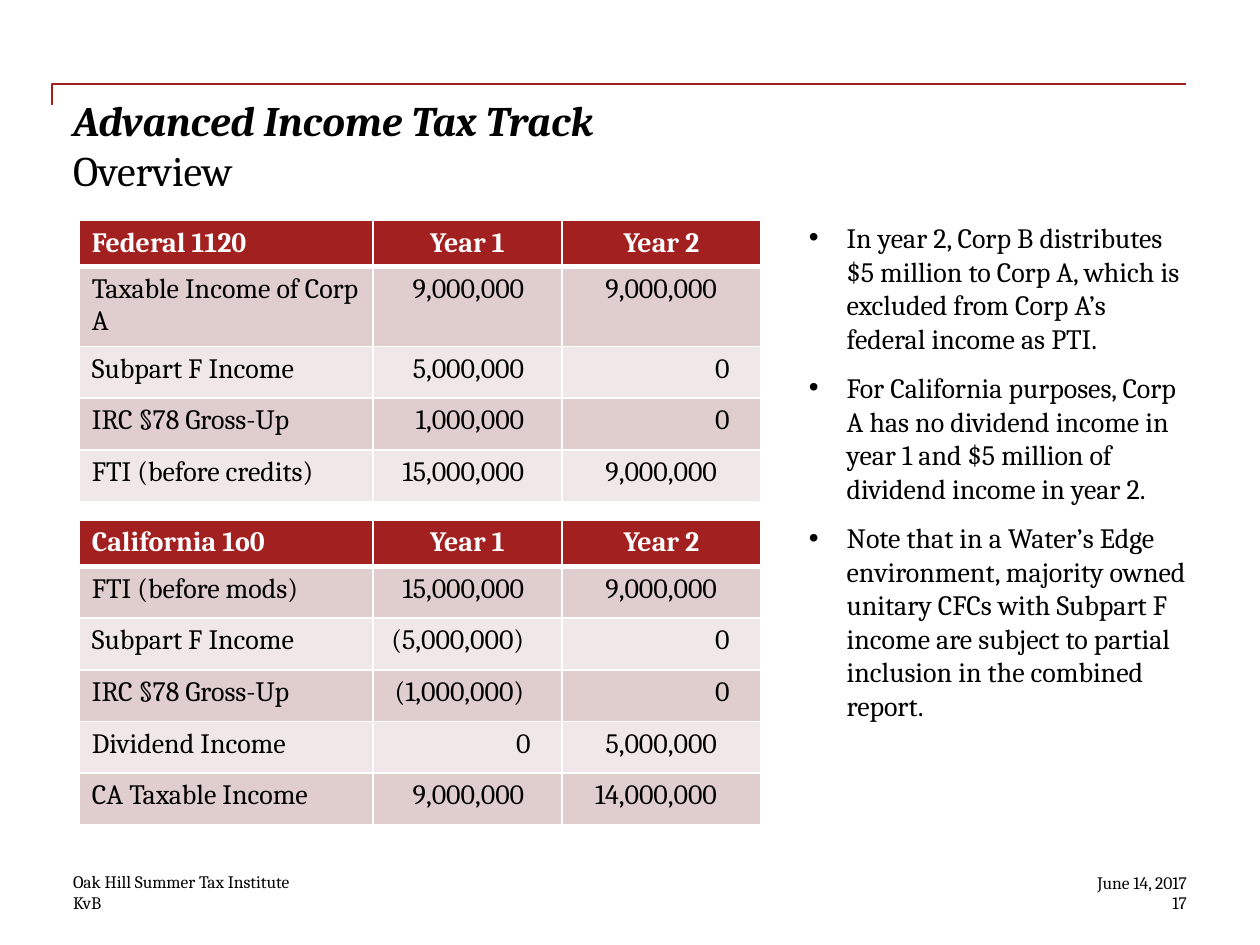
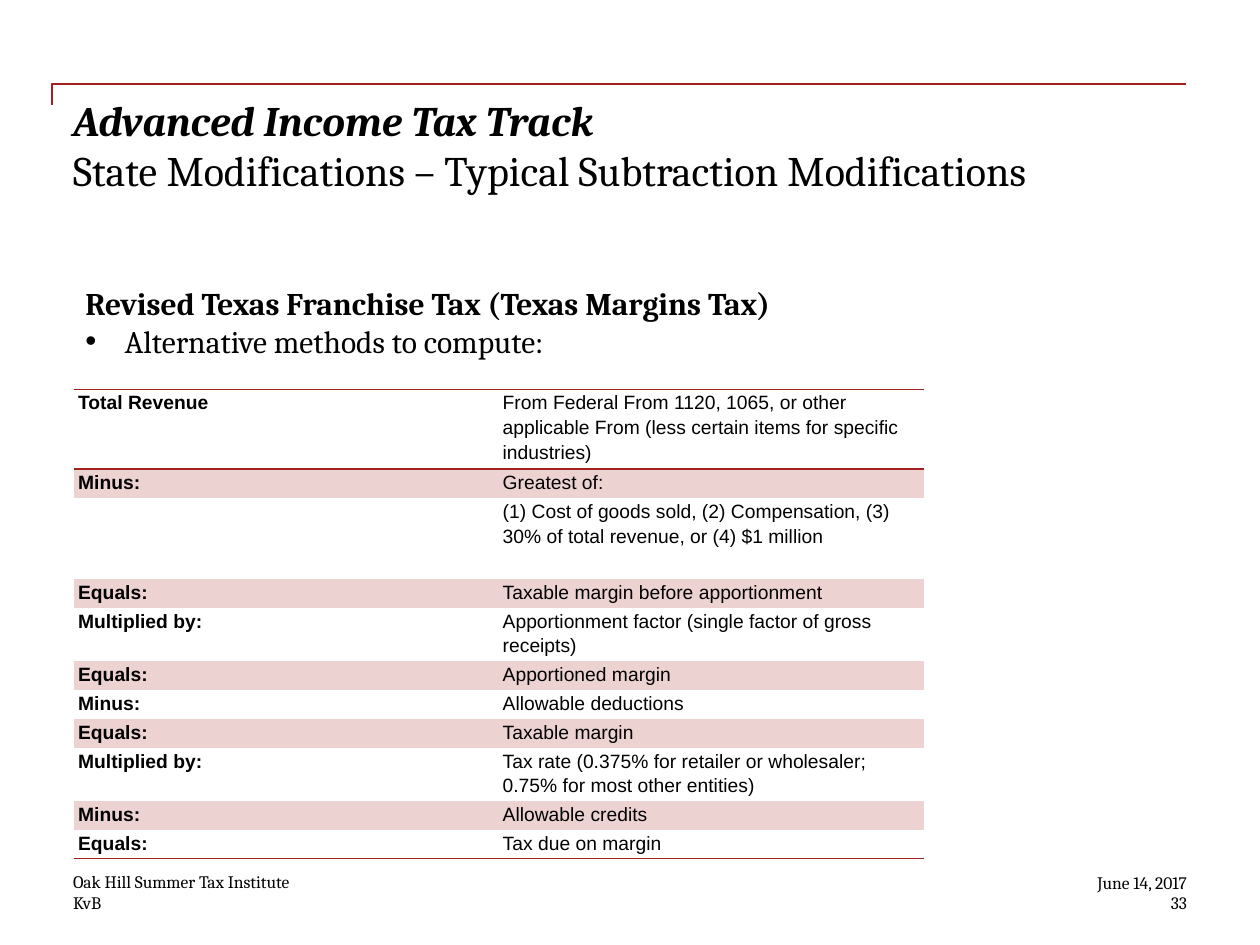
from lxml import etree
from pptx import Presentation
from pptx.dml.color import RGBColor
from pptx.enum.shapes import MSO_CONNECTOR
from pptx.enum.text import MSO_ANCHOR, PP_ALIGN
from pptx.oxml.ns import qn
from pptx.util import Inches, Pt

LEFT, CENTER, RIGHT = PP_ALIGN.LEFT, PP_ALIGN.CENTER, PP_ALIGN.RIGHT
TOP, MIDDLE, BOTTOM = MSO_ANCHOR.TOP, MSO_ANCHOR.MIDDLE, MSO_ANCHOR.BOTTOM
ELBOW = MSO_CONNECTOR.ELBOW
RED, WHITE, BLACK = "A32020", "FFFFFF", "000000"
BAND_DARK, BAND_LIGHT, BAND_PINK = "E0CDCD", "F0E8E8", "EDD2D2"


def write(tf, text, size=16, font="Cambria", color=BLACK, bold=False, italic=False,
          align=LEFT, after=0, spacing=None, indent=None):
    p = tf.paragraphs[0]
    if p.runs:
        p = tf.add_paragraph()
    p.alignment = align
    p.space_after = Pt(after)
    if spacing:
        p.line_spacing = spacing
    if indent:
        pPr = p._p.get_or_add_pPr()
        pPr.set("marL", str(Inches(indent)))
        pPr.set("indent", str(-Inches(indent)))
        etree.SubElement(pPr, qn("a:buFont")).set("typeface", "Arial")
        etree.SubElement(pPr, qn("a:buChar")).set("char", "•")
    r = p.add_run()
    r.text = text
    r.font.size = Pt(size)
    r.font.name = font
    r.font.bold = bold
    r.font.italic = italic
    r.font.color.rgb = RGBColor.from_string(color)


def style_cell(cell, fill, borders):
    if fill:
        cell.fill.solid()
        cell.fill.fore_color.rgb = RGBColor.from_string(fill)
    else:
        cell.fill.background()
    tcPr = cell._tc.get_or_add_tcPr()
    for i, side in enumerate("LRTB"):
        ln = etree.Element(qn("a:ln" + side))
        if side in borders:
            color, width = borders[side]
            ln.set("w", str(Pt(width)))
            line_fill = etree.SubElement(ln, qn("a:solidFill"))
            etree.SubElement(line_fill, qn("a:srgbClr")).set("val", color)
        else:
            etree.SubElement(ln, qn("a:noFill"))
        tcPr.insert(i, ln)


prs = Presentation()
prs.slide_width, prs.slide_height = Inches(10), Inches(7.5)

pages = [
    ("Overview", "17"),
    ("State Modifications – Typical Subtraction Modifications", "33"),
]
for subtitle, number in pages:
    s = prs.slides.add_slide(prs.slide_layouts[6])
    cn = s.shapes.add_connector(ELBOW, Inches(5), Inches(5.25), Inches(4.83), Inches(-3.75))
    cn.line.color.rgb = RGBColor.from_string(RED)
    cn.line.width = Pt(1)
    spPr = cn._element.spPr
    spPr.find(qn("a:xfrm")).set("rot", str(90 * 60000))
    spPr.find(qn("a:prstGeom")).set("prst", "bentConnector2")
    etree.SubElement(spPr, qn("a:effectLst"))

    boxes = [
        (0.58, 0.75, 8.83, 1, TOP, [
            ("Advanced Income Tax Track", dict(size=24, bold=True, italic=True)),
            (subtitle, dict(size=24))]),
        (0.58, 6.92, 5.75, 0.16, BOTTOM, [("Oak Hill Summer Tax Institute", dict(size=10))]),
        (0.58, 7.08, 2.83, 0.17, TOP, [("KvB", dict(size=10))]),
        (7.75, 6.92, 1.67, 0.17, TOP, [("June 14, 2017", dict(size=10, align=RIGHT))]),
        (7.75, 7.08, 1.67, 0.17, TOP, [(number, dict(size=10, align=RIGHT))]),
    ]
    for x, y, w, h, anchor, lines in boxes:
        tf = s.shapes.add_textbox(Inches(x), Inches(y), Inches(w), Inches(h)).text_frame
        tf.word_wrap = True
        tf.vertical_anchor = anchor
        tf.margin_left = tf.margin_right = tf.margin_top = tf.margin_bottom = 0
        for text, fmt in lines:
            write(tf, text, **fmt)

overview, texas = prs.slides

tax_tables = [
    (1.75, [
        ("Federal 1120", "Year 1", "Year 2"),
        ("Taxable Income of Corp A", "9,000,000", "9,000,000"),
        ("Subpart F Income", "5,000,000", "0"),
        ("IRC §78 Gross-Up", "1,000,000", "0"),
        ("FTI (before credits)", "15,000,000", "9,000,000"),
    ]),
    (4.13, [
        ("California 1o0", "Year 1", "Year 2"),
        ("FTI (before mods)", "15,000,000", "9,000,000"),
        ("Subpart F Income", "(5,000,000)", "0"),
        ("IRC §78 Gross-Up", "(1,000,000)", "0"),
        ("Dividend Income", "0", "5,000,000"),
        ("CA Taxable Income", "9,000,000", "14,000,000"),
    ]),
]
for top, rows in tax_tables:
    height = 0.32 + 0.41 * (len(rows) - 1)
    table = overview.shapes.add_table(len(rows), 3, Inches(0.63), Inches(top),
                                      Inches(5.42), Inches(height)).table
    for col, width in zip(table.columns, (2.33, 1.5, 1.58)):
        col.width = Inches(width)
    for i, row in enumerate(rows):
        table.rows[i].height = Inches(0.41 if i else 0.32)
        for j, text in enumerate(row):
            cell = table.cell(i, j)
            borders = dict.fromkeys("LRTB", (WHITE, 1))
            if i == 0:
                fill = RED
                borders["B"] = (WHITE, 3)
                write(cell.text_frame, text, color=WHITE, bold=True,
                      align=CENTER if j else LEFT)
            else:
                fill = BAND_DARK if i % 2 else BAND_LIGHT
                if i == 1:
                    borders["T"] = (WHITE, 3)
                if j:
                    cell.margin_right = Inches(0.25 if text == "0" else 0.3 + 0.05 * (j - 1))
                write(cell.text_frame, text, align=RIGHT if j else LEFT)
            style_cell(cell, fill, borders)

notes = [
    "In year 2, Corp B distributes $5 million to Corp A, which is excluded from "
    "Corp A’s federal income as PTI.",
    "For California purposes, Corp A has no dividend income in year 1 and $5 million "
    "of dividend income in year 2.",
    "Note that in a Water’s Edge environment, majority owned unitary CFCs with Subpart F "
    "income are subject to partial inclusion in the combined report.",
]
tf = overview.shapes.add_textbox(Inches(6.42), Inches(1.75), Inches(3), Inches(4.83)).text_frame
tf.word_wrap = True
tf.margin_left = tf.margin_right = tf.margin_top = tf.margin_bottom = 0
for note in notes:
    write(tf, note, after=9, indent=0.3)

margin_steps = [
    ("Total Revenue", "From Federal From 1120, 1065, or other applicable From "
     "(less certain items for specific industries)", 0.59),
    ("Minus:", "Greatest of:", 0.23),
    ("", "(1) Cost of goods sold, (2) Compensation, (3) 30% of total revenue, "
     "or (4) $1 million", 0.64),
    ("Equals:", "Taxable margin before apportionment", 0.23),
    ("Multiplied by:", "Apportionment factor (single factor of gross receipts)", 0.39),
    ("Equals:", "Apportioned margin", 0.23),
    ("Minus:", "Allowable deductions", 0.23),
    ("Equals:", "Taxable margin", 0.23),
    ("Multiplied by:", "Tax rate (0.375% for retailer or wholesaler; "
     "0.75% for most other entities)", 0.39),
    ("Minus:", "Allowable credits", 0.23),
    ("Equals:", "Tax due on margin", 0.23),
]
last = len(margin_steps) - 1
table = texas.shapes.add_table(len(margin_steps), 2, Inches(0.59), Inches(3.09), Inches(6.74),
                               Inches(sum(step[2] for step in margin_steps))).table
table.first_row = table.horz_banding = False
for i, (label, detail, height) in enumerate(margin_steps):
    table.rows[i].height = Inches(height)
    borders = {}
    if i == 0:
        borders["T"] = (RED, 1)
    if i in (0, last):
        borders["B"] = (RED, 1)
    if i == 1:
        borders["T"] = (RED, 1)
    for j, text in enumerate((label, detail)):
        cell = table.cell(i, j)
        cell.margin_left = cell.margin_right = Inches(0.03)
        cell.margin_top = cell.margin_bottom = 0
        if text:
            write(cell.text_frame, text, size=11, font="Arial", bold=j == 0,
                  after=10, spacing=1.15)
        style_cell(cell, BAND_PINK if i % 2 else None, borders)

tf = texas.shapes.add_textbox(Inches(0.58), Inches(2.2), Inches(6.65), Inches(0.71)).text_frame
tf.word_wrap = False
tf.vertical_anchor = MIDDLE
write(tf, "Revised Texas Franchise Tax (Texas Margins Tax)", size=18, bold=True)
write(tf, "Alternative methods to compute:", size=18, indent=0.31)

prs.save("out.pptx")
